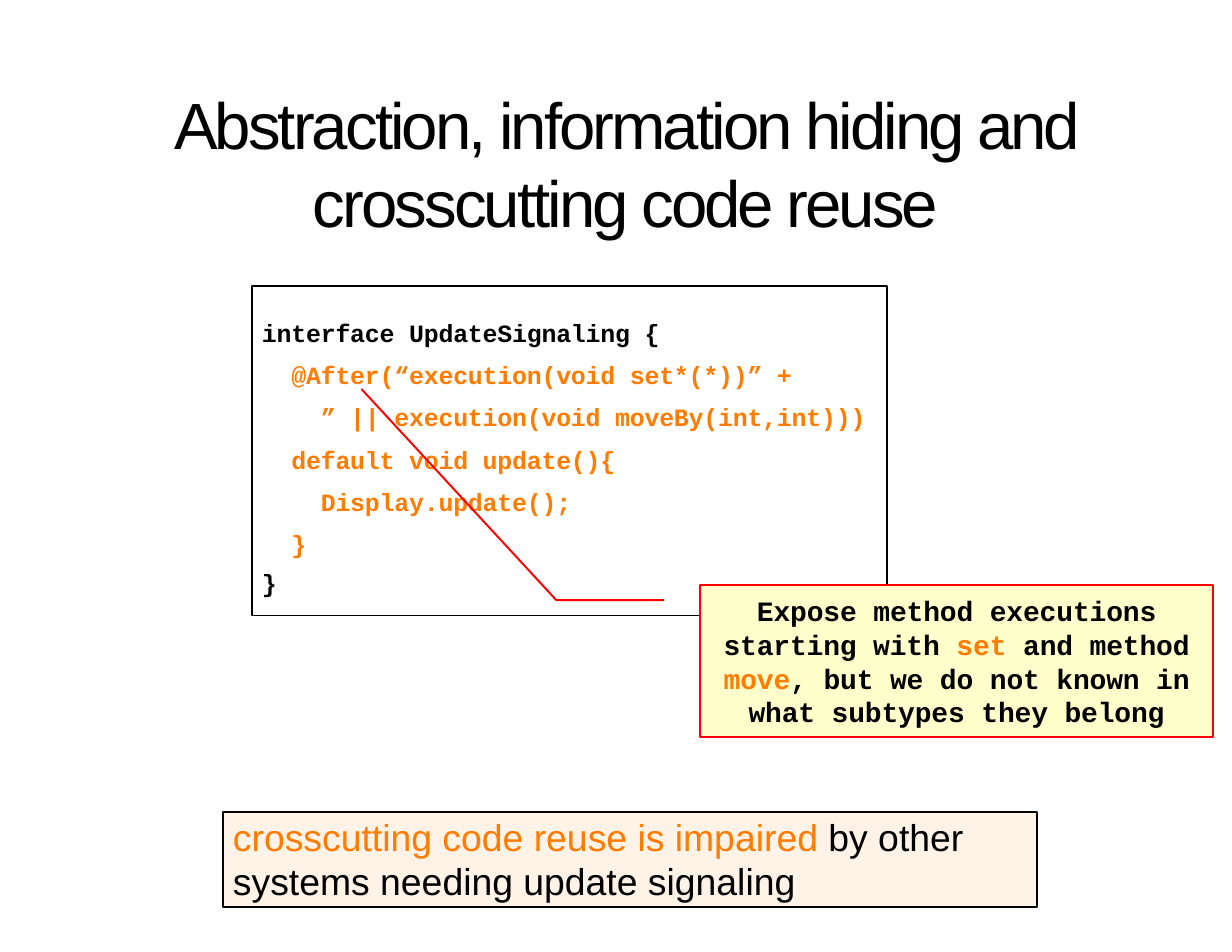
import pptx
import pptx.util
import pptx.dml.color
import pptx.enum.shapes
import pptx.enum.text

EMU_PER_PX = 914400 / 112
COLORS = {
    "black": "000000",
    "orange": "FF7C00",
    "red": "FF0000",
    "yellow": "FFFFCC",
    "peach": "FFF2E7",
}
SHAPES = pptx.enum.shapes.MSO_SHAPE
ANCHOR = pptx.enum.text.MSO_ANCHOR
ALIGN = pptx.enum.text.PP_ALIGN


def px(length):
    return pptx.util.Emu(round(length * EMU_PER_PX))


def rgb(name):
    return pptx.dml.color.RGBColor.from_string(COLORS[name])


class SlideBuilder:
    def __init__(self, slide):
        self.slide = slide

    def prepare(self, shape, insets, anchor=ANCHOR.TOP):
        frame = shape.text_frame
        frame.word_wrap = True
        frame.auto_size = pptx.enum.text.MSO_AUTO_SIZE.NONE
        frame.vertical_anchor = anchor
        (frame.margin_left, frame.margin_top,
         frame.margin_right, frame.margin_bottom) = map(px, insets)
        return frame

    def fill_paragraph(self, paragraph, runs, font, size, bold=False,
                       align=ALIGN.LEFT, spacing=0, line_spacing=1.0,
                       before=0, margin=0, indent=0):
        """Fill a paragraph with (text, color) runs; spacing is in points."""
        properties = paragraph._p.get_or_add_pPr()
        properties.set("marL", str(px(margin)))
        properties.set("indent", str(px(indent)))
        paragraph.alignment = align
        paragraph.line_spacing = line_spacing
        paragraph.space_before = pptx.util.Pt(before)
        paragraph.font.name = font
        paragraph.font.size = pptx.util.Pt(size)
        paragraph.font.bold = bold
        for text, color in runs:
            run = paragraph.add_run()
            run.text = text
            run.font.color.rgb = rgb(color)
            if spacing:
                run._r.get_or_add_rPr().set("spc", str(round(spacing * 100)))

    def title(self, text, box):
        shape = self.slide.shapes.title
        shape.left, shape.top, shape.width, shape.height = map(px, box)
        frame = self.prepare(shape, (0, 0, 0, 0))
        self.fill_paragraph(frame.paragraphs[0], [(text, "black")], "Arial", 42,
                            align=ALIGN.CENTER, spacing=-1.9)

    def code(self, lines, box):
        shape = self.slide.shapes.add_textbox(*map(px, box))
        frame = self.prepare(shape, (0, 4, 0, 0))
        for number, (text, color) in enumerate(lines):
            paragraph = frame.paragraphs[0] if number == 0 else frame.add_paragraph()
            if number == len(lines) - 1:
                layout = dict(before=5.8, margin=10)
            else:
                layout = dict(before=3.2 if number else 0, line_spacing=1.25,
                              margin=40, indent=-30, spacing=-0.1)
            self.fill_paragraph(paragraph, [(text, color)], "Courier New", 16,
                                bold=True, **layout)

    def shape(self, kind, box, line, width, fill=None):
        shape = self.slide.shapes.add_shape(kind, *map(px, box))
        shape.shadow.inherit = False
        shape.line.color.rgb = rgb(line)
        shape.line.width = pptx.util.Pt(width)
        if fill:
            shape.fill.solid()
            shape.fill.fore_color.rgb = rgb(fill)
        else:
            shape.fill.background()
        return shape

    def callout(self, runs, box, adjustments):
        shape = self.shape(SHAPES.LINE_CALLOUT_2, box, "red", 1.25, "yellow")
        for index, value in enumerate(adjustments):
            shape.adjustments[index] = value
        frame = self.prepare(shape, (11, 6, 11, 6), ANCHOR.MIDDLE)
        self.fill_paragraph(frame.paragraphs[0], runs, "Courier New", 18,
                            bold=True, align=ALIGN.CENTER, spacing=-0.1)

    def conclusion(self, runs, box):
        shape = self.shape(SHAPES.RECTANGLE, box, "black", 1, "peach")
        frame = self.prepare(shape, (0, 4, 0, 0))
        self.fill_paragraph(frame.paragraphs[0], runs, "Arial", 24,
                            line_spacing=0.99, margin=10)


def main():
    presentation = pptx.Presentation()
    presentation.slide_width = px(1232)
    presentation.slide_height = px(952)
    slide = presentation.slides.add_slide(presentation.slide_layouts[5])
    builder = SlideBuilder(slide)

    builder.title("Abstraction, information hiding and crosscutting code reuse",
                  (131, 84, 989, 158))

    # Code listing and its frame
    builder.code([
        ("interface UpdateSignaling {", "black"),
        ("  @After(“execution(void set*(*))” +", "orange"),
        ("    ” || execution(void moveBy(int,int)))", "orange"),
        ("  default void update(){", "orange"),
        ("    Display.update();", "orange"),
        ("  }", "orange"),
        ("}", "black"),
    ], (252, 306, 905, 295))
    builder.shape(SHAPES.RECTANGLE, (252, 286, 635, 330), "black", 0.75)

    # Callout pointing at the annotation
    builder.callout([
        ("Expose method executions starting with ", "black"),
        ("set", "orange"),
        (" and method ", "black"),
        ("move", "orange"),
        (", but we do not known in what subtypes they belong", "black"),
    ], (700, 585, 513, 152), (0.1, -0.07, 0.1, -0.28, -1.29, -0.66))

    # Conclusion
    builder.conclusion([
        ("crosscutting code reuse is impaired ", "orange"),
        ("by other systems needing update signaling", "black"),
    ], (223, 812, 814, 95))

    presentation.save("out.pptx")


if __name__ == "__main__":
    main()
